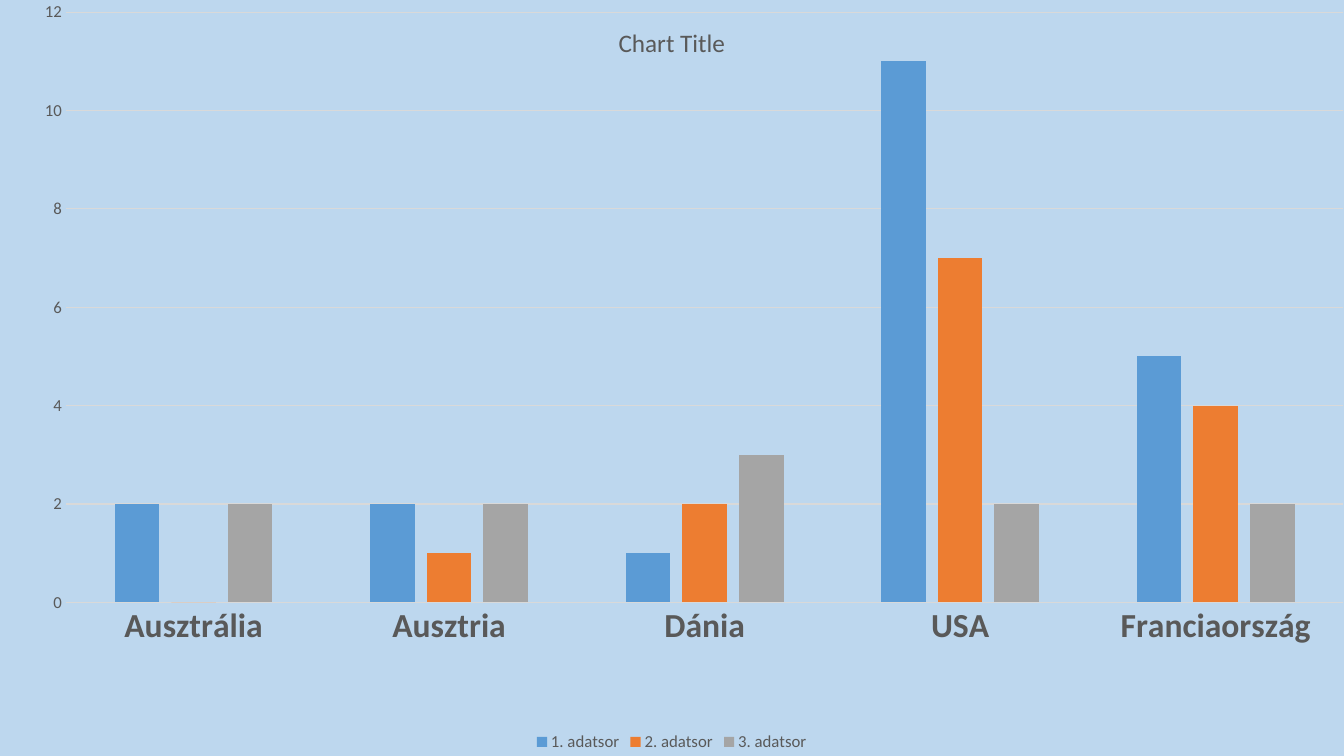
from lxml import etree
from pptx import Presentation
from pptx.chart.data import CategoryChartData
from pptx.dml.color import RGBColor
from pptx.enum.chart import XL_CHART_TYPE, XL_LEGEND_POSITION, XL_TICK_MARK
from pptx.oxml.ns import qn
from pptx.util import Emu, Pt

SCALE = 9072
WIDTH, HEIGHT = 1344, 756
CATEGORIES = ["Ausztrália", "Ausztria", "Dánia", "USA", "Franciaország"]
SERIES = [
    ("1. adatsor", [2, 2, 1, 11, 5], "5B9BD5"),
    ("2. adatsor", [0, 1, 2, 7, 4], "ED7D31"),
    ("3. adatsor", [2, 2, 3, 2, 2], "A5A5A5"),
]


def px(n):
    return Emu(n * SCALE)


def rgb(value):
    return RGBColor.from_string(value)


class Deck:
    """Holds the style and the current slide, and adds charts to it."""

    font, text, rule, back = "Calibri", "595959", "D9D9D9", "BDD7EE"

    def __init__(self):
        self.prs = Presentation()
        self.prs.slide_width, self.prs.slide_height = px(WIDTH), px(HEIGHT)

    def add_slide(self):
        self.slide = self.prs.slides.add_slide(self.prs.slide_layouts[6])
        fill = self.slide.background.fill
        fill.solid()
        fill.fore_color.rgb = rgb(self.back)

    def style_font(self, font, size, bold=False):
        font.name, font.size, font.bold = self.font, Pt(size), bold
        font.color.rgb = rgb(self.text)

    def style_line(self, line):
        line.color.rgb = rgb(self.rule)
        line.width = Pt(0.75)

    def style_axis(self, axis, size, bold=False):
        axis.major_tick_mark = axis.minor_tick_mark = XL_TICK_MARK.NONE
        self.style_font(axis.tick_labels.font, size, bold)

    def place_plot(self, chart, x, y, w, h):
        area = chart.element.find(".//" + qn("c:plotArea"))
        for old in area.findall(qn("c:layout")):
            area.remove(old)
        layout = etree.Element(qn("c:layout"))
        area.insert(0, layout)
        manual = etree.SubElement(layout, qn("c:manualLayout"))
        settings = [("layoutTarget", "inner"), ("xMode", "edge"), ("yMode", "edge"),
                    ("x", x), ("y", y), ("w", w), ("h", h)]
        for tag, value in settings:
            etree.SubElement(manual, qn("c:" + tag)).set("val", str(value))

    def title(self, chart, text, size):
        title = chart.chart_title
        title.include_in_layout = True
        r = title.text_frame.paragraphs[0].add_run()
        r.text = text
        self.style_font(r.font, size)
        overlay = title._element.find(qn("c:overlay"))
        if overlay is None:
            overlay = title._element.get_or_add_tx().getparent().makeelement(qn("c:overlay"))
            title._element.get_or_add_layout().addnext(overlay)
        overlay.set("val", "1")

    def legend(self, chart, size):
        chart.has_legend = True
        chart.legend.position = XL_LEGEND_POSITION.BOTTOM
        chart.legend.include_in_layout = False
        self.style_font(chart.legend.font, size)

    def column_chart(self, x, y, w, h, categories, series):
        data = CategoryChartData()
        data.categories = categories
        for name, values, _ in series:
            data.add_series(name, values)
        chart = self.slide.shapes.add_chart(
            XL_CHART_TYPE.COLUMN_CLUSTERED, px(x), px(y), px(w), px(h), data).chart
        chart.font.name, chart.font.size = self.font, Pt(10)

        plot = chart.plots[0]
        plot.gap_width, plot.overlap = 219, -27
        plot.vary_by_categories = False
        for column, (_, _, color) in zip(plot.series, series):
            column.format.fill.solid()
            column.format.fill.fore_color.rgb = rgb(color)

        self.style_axis(chart.category_axis, 24, bold=True)
        self.style_line(chart.category_axis.format.line)
        values = chart.value_axis
        self.style_axis(values, 12)
        values.minimum_scale, values.maximum_scale, values.major_unit = 0, 12, 2
        values.format.line.fill.background()
        values.has_major_gridlines = True
        self.style_line(values.major_gridlines.format.line)
        return chart


def main():
    deck = Deck()
    deck.add_slide()
    chart = deck.column_chart(0, 0, WIDTH, HEIGHT, CATEGORIES, SERIES)
    deck.place_plot(chart, 0.049, 0.016, 0.951, 0.781)
    deck.title(chart, "Chart Title", 18)
    deck.legend(chart, 12)
    deck.prs.save("out.pptx")


if __name__ == "__main__":
    main()
